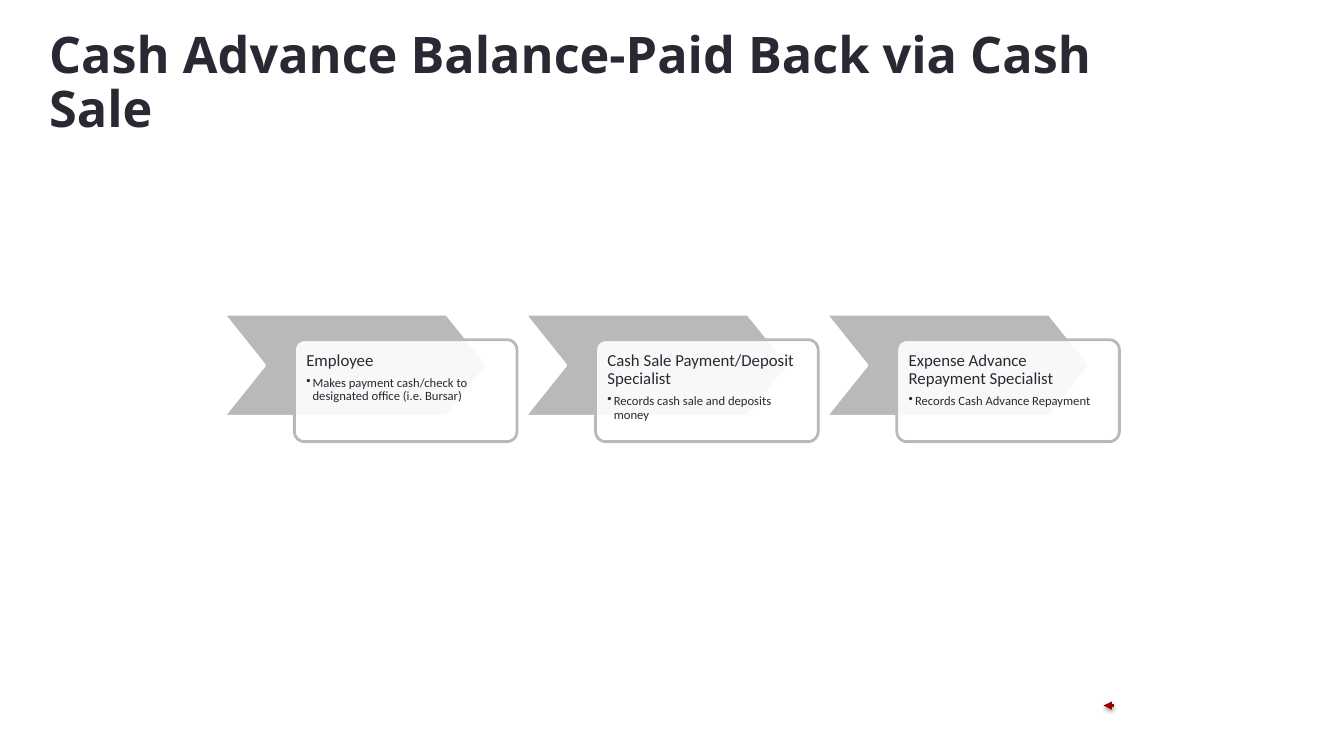
from dataclasses import dataclass

from lxml.etree import SubElement as Sub
from pptx import Presentation
from pptx.dml.color import RGBColor as Rgb
from pptx.enum.shapes import MSO_CONNECTOR as Link, MSO_SHAPE as Kind
from pptx.enum.text import MSO_ANCHOR as Anchor, PP_ALIGN as Align
from pptx.oxml.ns import qn
from pptx.shapes.autoshape import Shape
from pptx.slide import Slide
from pptx.text.text import TextFrame
from pptx.util import Cm, Pt


@dataclass(frozen=True)
class Theme:
    ink: str = "292934"
    grey: str = "B9B9B9"
    white: str = "FFFFFF"
    red: str = "990000"
    black: str = "000000"
    head: str = "Noto Sans"
    body: str = "Calibri"
    title: int = 36
    role: int = 12
    task: int = 9
    line: int = 2


@dataclass(frozen=True)
class Box:
    left: float
    top: float
    width: float
    height: float

    def shift(self, dist: float) -> "Box":
        return Box(self.left + dist, self.top, self.width, self.height)

    def cm(self) -> tuple[Cm, Cm, Cm, Cm]:
        return Cm(self.left), Cm(self.top), Cm(self.width), Cm(self.height)


@dataclass(frozen=True)
class Step:
    role: str
    task: str


THEME = Theme()
TITLE = Box(0.99, 1.07, 29.21, 2.11)
ARROW = Box(5.64, 7.92, 6.65, 2.57)
CARD = Box(7.42, 8.56, 5.61, 2.57)
LABEL = Box(7.49, 8.64, 5.46, 2.41)
PITCH = 7.59
STEPS = [
    Step("Employee", "Makes payment cash/check to designated office (i.e. Bursar)"),
    Step("Cash Sale Payment/Deposit Specialist", "Records cash sale and deposits money"),
    Step("Expense Advance Repayment Specialist", "Records Cash Advance Repayment"),
]


def frame(slide: Slide, box: Box) -> TextFrame:
    text = slide.shapes.add_textbox(*box.cm()).text_frame
    text.word_wrap = True
    return text


def write(text: TextFrame, words: str, *, size: int, font: str = THEME.body,
          bold: bool = False, after: float = 0, bullet: bool = False) -> None:
    """Fill the first paragraph if it is empty, else add one."""
    para = text.paragraphs[0]
    if para.runs:
        para = text.add_paragraph()
    para.alignment = Align.LEFT
    para.line_spacing = 0.9
    para.space_after = Pt(after)
    if bullet:
        props = para._p.get_or_add_pPr()
        props.set("marL", str(Cm(0.16)))
        props.set("indent", str(Cm(-0.16)))
        Sub(props, qn("a:buChar"), char="•")
    run = para.add_run()
    run.text = words
    run.font.name = font
    run.font.size = Pt(size)
    run.font.bold = bold
    run.font.color.rgb = Rgb.from_string(THEME.ink)


def draw(slide: Slide, kind: Kind, box: Box, *, fill: str, line: str, adjust: float) -> Shape:
    shape = slide.shapes.add_shape(kind, *box.cm())
    shape.shadow.inherit = False
    shape.adjustments[0] = adjust
    shape.fill.solid()
    shape.fill.fore_color.rgb = Rgb.from_string(fill)
    shape.line.color.rgb = Rgb.from_string(line)
    shape.line.width = Pt(THEME.line)
    return shape


def add_step(slide: Slide, step: Step, dist: float) -> None:
    draw(slide, Kind.CHEVRON, ARROW.shift(dist),
         fill=THEME.grey, line=THEME.white, adjust=0.4)
    card = draw(slide, Kind.ROUNDED_RECTANGLE, CARD.shift(dist),
                fill=THEME.white, line=THEME.grey, adjust=0.1)
    tint = card._element.spPr.find(qn("a:solidFill")).find(qn("a:srgbClr"))
    Sub(tint, qn("a:alpha"), val="90000")
    text = frame(slide, LABEL.shift(dist))
    text.margin_left = text.margin_right = Cm(0.23)
    text.margin_top = text.margin_bottom = Cm(0.23)
    write(text, step.role, size=THEME.role, after=4.5)
    write(text, step.task, size=THEME.task, after=1.5, bullet=True)


def add_mark(slide: Slide) -> None:
    """Draw the small red arrow with its soft shadow."""
    mark = slide.shapes.add_connector(
        Link.STRAIGHT, Cm(28.07), Cm(17.78), Cm(27.81), Cm(17.78))
    mark.line.color.rgb = Rgb.from_string(THEME.red)
    mark.line.width = Pt(THEME.line)
    Sub(mark.line._get_or_add_ln(), qn("a:tailEnd"), type="triangle")
    glow = Sub(mark._element.spPr, qn("a:effectLst"))
    shade = Sub(glow, qn("a:outerShdw"), blurRad=str(Pt(3.1)), dist=str(Pt(1.6)),
                dir="5400000", rotWithShape="0")
    tint = Sub(shade, qn("a:srgbClr"), val=THEME.black)
    Sub(tint, qn("a:alpha"), val="38000")


def main() -> None:
    deck = Presentation()
    deck.slide_width, deck.slide_height = Cm(33.87), Cm(19.05)
    slide = deck.slides.add_slide(deck.slide_layouts[6])
    title = frame(slide, TITLE)
    title.vertical_anchor = Anchor.MIDDLE
    write(title, "Cash Advance Balance-Paid Back via Cash Sale",
          size=THEME.title, font=THEME.head, bold=True)
    add_mark(slide)
    for index, step in enumerate(STEPS):
        add_step(slide, step, index * PITCH)
    deck.save("out.pptx")


if __name__ == "__main__":
    main()
